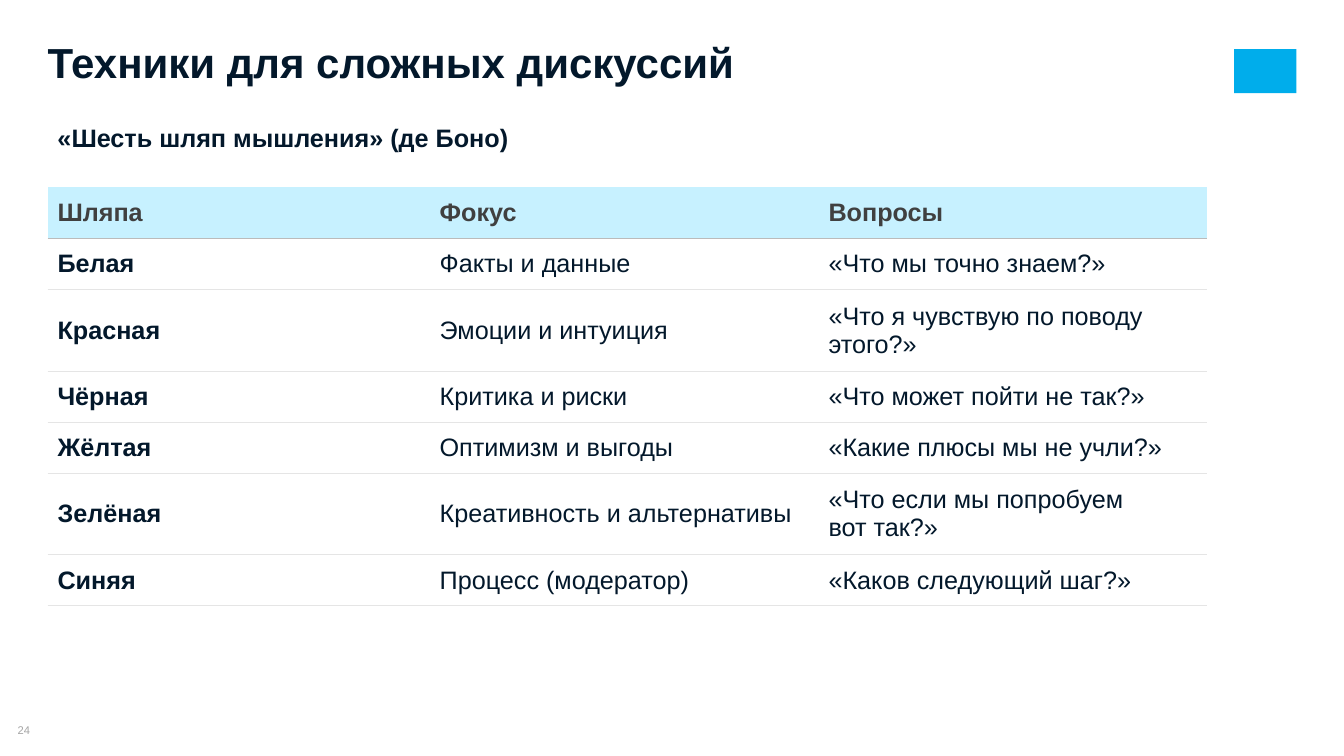
from dataclasses import dataclass

from lxml import etree
from pptx import Presentation
from pptx.dml.color import RGBColor
from pptx.enum.shapes import MSO_SHAPE
from pptx.enum.text import MSO_ANCHOR, MSO_AUTO_SIZE, PP_ALIGN
from pptx.oxml.ns import qn
from pptx.util import Cm, Pt

TITLE_ONLY_LAYOUT = 5
RECTANGLE = MSO_SHAPE.RECTANGLE
TOP, MIDDLE = MSO_ANCHOR.TOP, MSO_ANCHOR.MIDDLE
LEFT, CENTER = PP_ALIGN.LEFT, PP_ALIGN.CENTER
NO_AUTOFIT = MSO_AUTO_SIZE.NONE


@dataclass(frozen=True)
class Theme:
    font: str = "Arial"
    ink: str = "03182B"
    header_ink: str = "404040"
    header_fill: str = "C7F1FF"
    header_rule: str = "BBBBBB"
    row_fill: str = "FFFFFF"
    row_rule: str = "E5E5E5"
    accent: str = "00ADEB"
    muted: str = "A6A6A6"
    title_size: int = 30
    text_size: int = 18
    number_size: int = 8
    rule_width: float = 0.75


# Content
TITLE = "Техники для сложных дискуссий"
SUBTITLE = "«Шесть шляп мышления» (де Боно)"
PAGE_NUMBER = "24"
HEADER = ("Шляпа", "Фокус", "Вопросы")
HATS = (
    ("Белая", "Факты и данные", "«Что мы точно знаем?»"),
    ("Красная", "Эмоции и интуиция", "«Что я чувствую по поводу этого?»"),
    ("Чёрная", "Критика и риски", "«Что может пойти не так?»"),
    ("Жёлтая", "Оптимизм и выгоды", "«Какие плюсы мы не учли?»"),
    ("Зелёная", "Креативность и альтернативы", "«Что если мы попробуем \nвот так?»"),
    ("Синяя", "Процесс (модератор)", "«Каков следующий шаг?»"),
)
COLUMN_WIDTHS = (9.63, 9.8, 9.8)
ROW_HEIGHT = 1.29
TWO_LINE_ROW_HEIGHT = 2.05
TWO_LINE_HATS = ("Красная", "Зелёная")


def write_text(text_frame, text, *, font, size, color, bold=False,
               align=LEFT, line_spacing=None):
    paragraph = text_frame.paragraphs[0]
    paragraph.text = text
    paragraph.alignment = align
    if line_spacing is not None:
        paragraph.line_spacing = line_spacing
    for run in paragraph.runs:
        run.font.name = font
        run.font.size = Pt(size)
        run.font.bold = bold
        run.font.color.rgb = RGBColor.from_string(color)


def set_border(cell, edge, width, color=None):
    line = etree.SubElement(cell._tc.get_or_add_tcPr(), qn(f"a:ln{edge}"),
                            w=str(Pt(width)))
    if color is None:
        etree.SubElement(line, qn("a:noFill"))
    else:
        fill = etree.SubElement(line, qn("a:solidFill"))
        etree.SubElement(fill, qn("a:srgbClr"), val=color)


class SlideBuilder:
    def __init__(self, slide, theme):
        self.slide = slide
        self.theme = theme

    def prepare_frame(self, shape, anchor, margin_x=0, margin_y=0):
        frame = shape.text_frame
        frame.word_wrap = True
        frame.auto_size = NO_AUTOFIT
        frame.vertical_anchor = anchor
        frame.margin_left = frame.margin_right = Cm(margin_x)
        frame.margin_top = frame.margin_bottom = Cm(margin_y)
        return frame

    def add_title(self, text, left, top, width, height):
        title = self.slide.shapes.title
        title.left, title.top = Cm(left), Cm(top)
        title.width, title.height = Cm(width), Cm(height)
        write_text(self.prepare_frame(title, TOP), text, font=self.theme.font,
                   size=self.theme.title_size, color=self.theme.ink,
                   bold=True, line_spacing=0.8)

    def add_text(self, text, left, top, width, height, *, anchor=TOP,
                 margin_x=0, margin_y=0, **text_format):
        box = self.slide.shapes.add_textbox(Cm(left), Cm(top), Cm(width), Cm(height))
        frame = self.prepare_frame(box, anchor, margin_x, margin_y)
        write_text(frame, text, font=self.theme.font, **text_format)

    def add_block(self, left, top, width, height, color):
        block = self.slide.shapes.add_shape(RECTANGLE, Cm(left), Cm(top),
                                            Cm(width), Cm(height))
        block.shadow.inherit = False
        block.fill.solid()
        block.fill.fore_color.rgb = RGBColor.from_string(color)
        block.line.fill.background()

    def format_cell(self, cell, text, *, color, bold, fill, top_rule, bottom_rule):
        cell.vertical_anchor = MIDDLE
        cell.margin_left = cell.margin_right = Cm(0.25)
        cell.margin_top = cell.margin_bottom = Cm(0.25)
        write_text(cell.text_frame, text, font=self.theme.font,
                   size=self.theme.text_size, color=color, bold=bold)
        for edge, rule in zip("LRTB", (None, None, top_rule, bottom_rule)):
            set_border(cell, edge, self.theme.rule_width, rule)
        cell.fill.solid()
        cell.fill.fore_color.rgb = RGBColor.from_string(fill)

    def add_table(self, header, rows, left, top, widths, heights):
        theme = self.theme
        table = self.slide.shapes.add_table(
            len(heights), len(widths), Cm(left), Cm(top),
            Cm(sum(widths)), Cm(sum(heights))).table
        table.first_row = table.horz_banding = False
        for column, width in zip(table.columns, widths):
            column.width = Cm(width)
        for row, height in zip(table.rows, heights):
            row.height = Cm(height)

        for column_index, text in enumerate(header):
            self.format_cell(table.cell(0, column_index), text,
                             color=theme.header_ink, bold=True,
                             fill=theme.header_fill, top_rule=None,
                             bottom_rule=theme.header_rule)
        for row_index, texts in enumerate(rows, start=1):
            top_rule = theme.header_rule if row_index == 1 else theme.row_rule
            for column_index, text in enumerate(texts):
                self.format_cell(table.cell(row_index, column_index), text,
                                 color=theme.ink, bold=column_index == 0,
                                 fill=theme.row_fill, top_rule=top_rule,
                                 bottom_rule=theme.row_rule)


def main():
    presentation = Presentation()
    presentation.slide_width, presentation.slide_height = Cm(33.87), Cm(19.05)
    layout = presentation.slide_layouts[TITLE_ONLY_LAYOUT]
    theme = Theme()
    builder = SlideBuilder(presentation.slides.add_slide(layout), theme)

    # Corner mark and page number
    builder.add_block(31.1, 1.24, 1.57, 1.11, theme.accent)
    builder.add_text(PAGE_NUMBER, 0, 18.24, 1.2, 0.33, anchor=MIDDLE,
                     size=theme.number_size, color=theme.muted, align=CENTER)

    # Headings
    builder.add_title(TITLE, 1.2, 1.17, 26.7, 1.04)
    builder.add_text(SUBTITLE, 1.2, 2.95, 16.94, 1.02, margin_x=0.25,
                     margin_y=0.13, size=theme.text_size, color=theme.ink,
                     bold=True)

    # Table of hats
    heights = [ROW_HEIGHT] + [
        TWO_LINE_ROW_HEIGHT if hat in TWO_LINE_HATS else ROW_HEIGHT
        for hat, _, _ in HATS]
    builder.add_table(HEADER, HATS, 1.2, 4.72, COLUMN_WIDTHS, heights)

    presentation.save("out.pptx")


if __name__ == "__main__":
    main()
